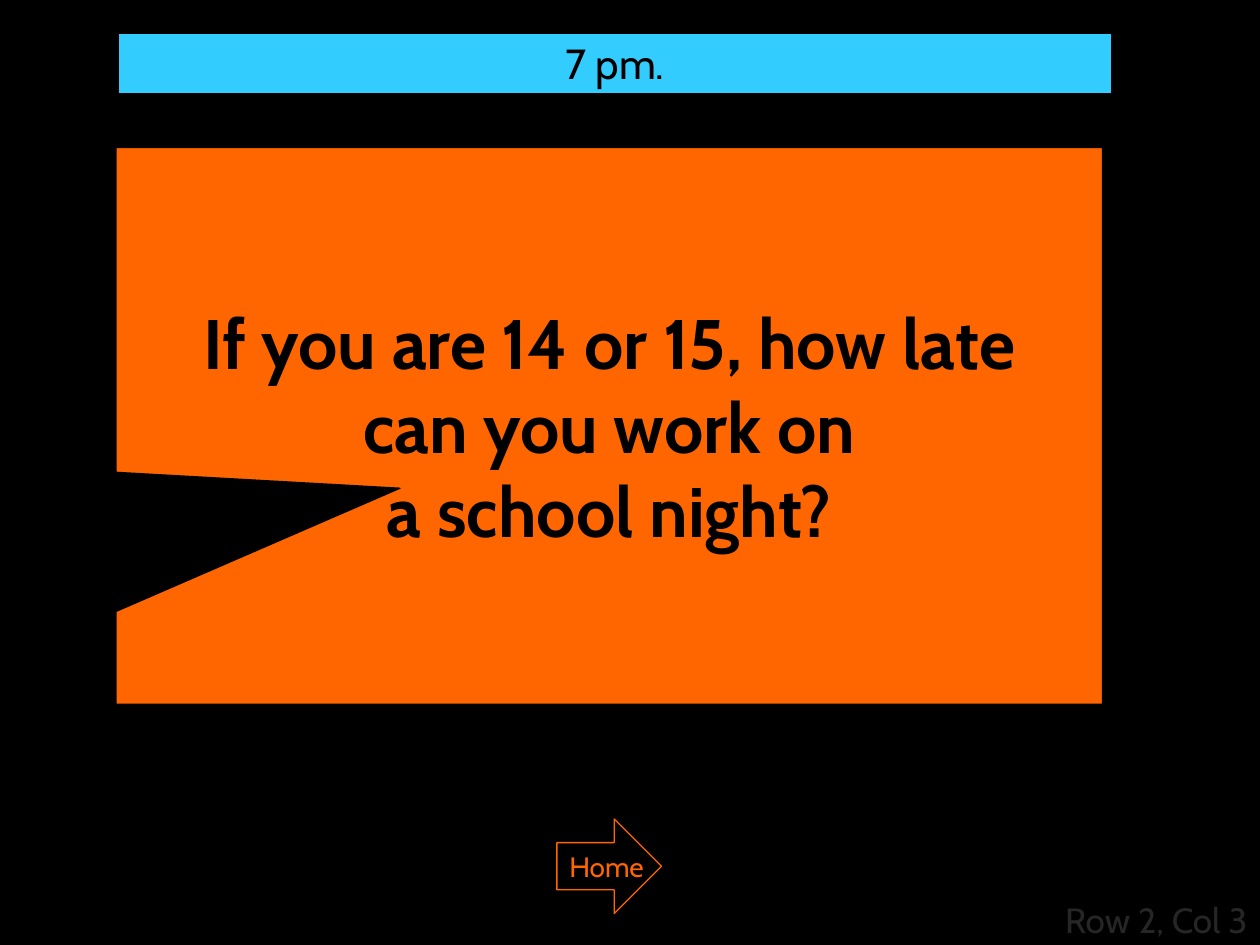
import pptx
import pptx.util
import pptx.dml.color
import pptx.enum.shapes
import pptx.enum.text

Inches, Pt = pptx.util.Inches, pptx.util.Pt
Shape = pptx.enum.shapes.MSO_SHAPE
Align = pptx.enum.text.PP_ALIGN
Anchor = pptx.enum.text.MSO_ANCHOR

THEME = {
    "font": "Cabin",
    "black": "000000", "orange": "FF6600", "blue": "33CCFF", "gray": "262626",
    "home": 16, "ask": 40, "answer": 24, "tag": 20,
}

HOME = ["Home"]
ASK = ["If you are 14 or 15, how late", "can you work on", "a school night?"]
ANSWER = ["7 pm."]
TAG = ["Row 2, Col 3"]

# Back to front: preset, box, adjustments, fill, line, line width, text, format
CARDS = [
    (Shape.RIGHT_ARROW, (4.42, 6.5, 0.83, 0.75), (0.5, 0.5),
     "black", "orange", 0.75, HOME,
     dict(size="home", color="orange", wrap=False)),
    (Shape.RECTANGULAR_CALLOUT, (0.92, 1.17, 7.83, 4.42), (-0.212, 0.112),
     "orange", "black", 0.75, ASK,
     dict(size="ask", bold=True, align=Align.CENTER)),
    (Shape.RECTANGLE, (0.92, 0.25, 7.92, 0.51), (),
     "blue", "black", 3, ANSWER,
     dict(size="answer", align=Align.CENTER, anchor=Anchor.TOP)),
]
TAG_BOX = (7.92, 7.08, 2.08, 0.42)


def tint(name):
    return pptx.dml.color.RGBColor.from_string(THEME[name])


def write(shape, lines, size, color="black", bold=False, align=Align.LEFT,
          anchor=Anchor.MIDDLE, wrap=True):
    frame = shape.text_frame
    frame.word_wrap = wrap
    frame.vertical_anchor = anchor
    for i, line in enumerate(lines):
        para = frame.add_paragraph() if i else frame.paragraphs[0]
        para.alignment = align
        run = para.add_run()
        run.text = line
        font = run.font
        font.name, font.size, font.bold = THEME["font"], Pt(THEME[size]), bold
        font.color.rgb = tint(color)


def card(slide, kind, box, adjust, fill, line, width, lines, form):
    shape = slide.shapes.add_shape(kind, *map(Inches, box))
    shape.shadow.inherit = False
    for i, value in enumerate(adjust):
        shape.adjustments[i] = value
    shape.fill.solid()
    shape.fill.fore_color.rgb = tint(fill)
    shape.line.color.rgb = tint(line)
    shape.line.width = Pt(width)
    write(shape, lines, **form)


def main():
    deck = pptx.Presentation()
    deck.slide_width, deck.slide_height = Inches(10), Inches(7.5)
    slide = deck.slides.add_slide(deck.slide_layouts[6])
    slide.background.fill.solid()
    slide.background.fill.fore_color.rgb = tint("black")
    for item in CARDS:
        card(slide, *item)
    tag = slide.shapes.add_textbox(*map(Inches, TAG_BOX))
    write(tag, TAG, size="tag", color="gray", align=Align.RIGHT,
          anchor=Anchor.TOP)
    deck.save("out.pptx")


if __name__ == "__main__":
    main()
